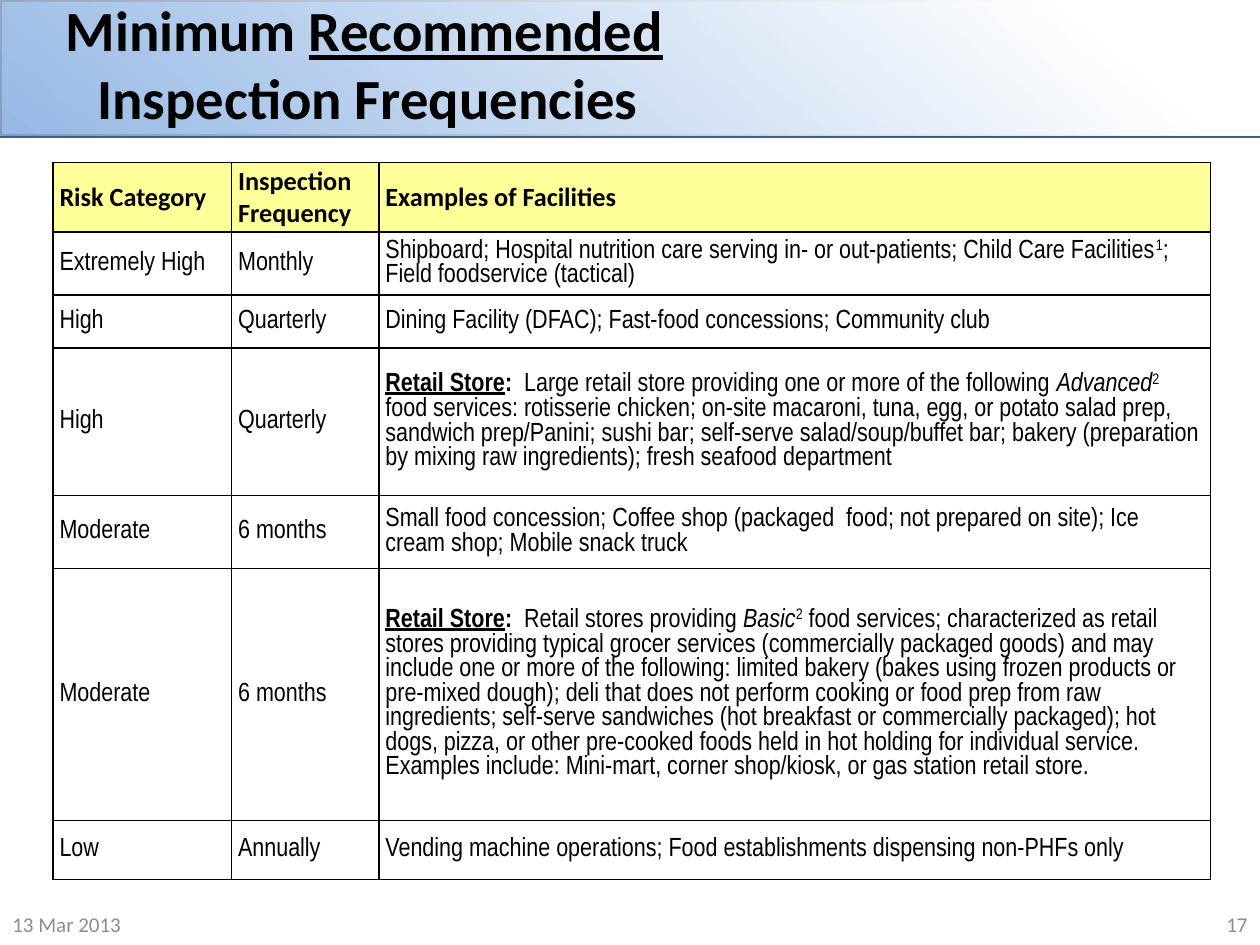
"""Build the slide on minimum recommended inspection frequencies."""
from lxml import etree
from pptx import Presentation
from pptx import util as u
from pptx.dml.color import RGBColor
from pptx.enum import shapes, text
from pptx.oxml import ns

BODY = {"name": "Arial Narrow", "size": u.Pt(15), "color": "000000"}
HEAD = {"name": "Calibri", "size": u.Pt(15), "color": "000000", "bold": True}
TITLE = {"name": "Calibri", "size": u.Pt(32.4), "color": "000000", "bold": True}
FOOT = {"name": "Calibri", "size": u.Pt(12), "color": "8C8C8C"}
UNDER, ITALIC, SUPER = {"underline": True}, {"italic": True}, {"baseline": 30000}
STORE = [("Retail Store", {"bold": True, "underline": True}), (":  ", {"bold": True})]

COLS = (3.6, 2.97, 16.76)
ROWS = (1.4, 1.27, 1.07, 2.97, 1.47, 5.08, 1.19)
CELLS = [
    ("Risk Category", "Inspection Frequency", "Examples of Facilities"),
    ("Extremely High", "Monthly", [
        ("Shipboard; Hospital nutrition care serving in- or out-patients; "
         "Child Care Facilities", {}),
        ("1", SUPER), ("; Field foodservice (tactical)", {})]),
    ("High", "Quarterly",
     "Dining Facility (DFAC); Fast-food concessions; Community club"),
    ("High", "Quarterly", STORE + [
        ("Large retail store providing one or more of the following ", {}),
        ("Advanced", ITALIC), ("2", SUPER),
        (" food services: rotisserie chicken; on-site macaroni, tuna, egg, or potato "
         "salad prep, sandwich prep/Panini; sushi bar; self-serve salad/soup/buffet "
         "bar; bakery (preparation by mixing raw ingredients); fresh seafood "
         "department", {})]),
    ("Moderate", "6 months",
     "Small food concession; Coffee shop (packaged  food; not prepared on site); "
     "Ice cream shop; Mobile snack truck"),
    ("Moderate", "6 months", STORE + [
        ("Retail stores providing ", {}), ("Basic", ITALIC), ("2", SUPER),
        (" food services; characterized as retail stores providing typical grocer "
         "services (commercially packaged goods) and may include one or more of the "
         "following: limited bakery (bakes using frozen products or pre-mixed dough); "
         "deli that does not perform cooking or food prep from raw ingredients; "
         "self-serve sandwiches (hot breakfast or commercially packaged); hot dogs, "
         "pizza, or other pre-cooked foods held in hot holding for individual "
         "service.  Examples include: Mini-mart, corner shop/kiosk, or gas station "
         "retail store.", {})]),
    ("Low", "Annually",
     "Vending machine operations; Food establishments dispensing non-PHFs only"),
]


def rgb(value):
    """Return a colour from a hex string."""
    return RGBColor.from_string(value)


def box(*lengths):
    """Return lengths in centimetres."""
    return [u.Cm(n) for n in lengths]


def add_run(p, words, fmt):
    """Add a run and apply its format values."""
    r = p.add_run()
    r.text = words
    for key, value in fmt.items():
        if key == "color":
            r.font.color.rgb = rgb(value)
        elif key == "baseline":
            r._r.get_or_add_rPr().set(key, str(value))
        else:
            setattr(r.font, key, value)


def add_band(s):
    """Add the blue band with its white fade behind the title."""
    for i in range(2):
        sp = s.shapes.add_shape(shapes.MSO_SHAPE.RECTANGLE, *box(0, 0, 25.4, 2.74))
        sp.shadow.inherit = False
        s.shapes._spTree.insert(2 + i, sp._element)
        if i == 0:
            sp.fill.solid()
            sp.fill.fore_color.rgb = rgb("558ED5")
            sp.line.color.rgb = rgb("3A5F8C")
            sp.line.width = u.Pt(2)
            continue
        sp.line.fill.background()
        sp.fill.gradient()
        sp.fill.gradient_angle = 230
        for stop, position in zip(sp.fill.gradient_stops, (0.14, 1)):
            stop.color.rgb = rgb("FFFFFF")
            stop.position = position
        last = sp._element.spPr.findall(".//" + ns.qn("a:srgbClr"))[-1]
        etree.SubElement(last, ns.qn("a:alpha")).set("val", "37000")


def add_title(s):
    """Place the title with its hanging second line."""
    sp = s.shapes.title
    sp.left, sp.top, sp.width, sp.height = box(1.07, 0, 22.86, 2.54)
    tf = sp.text_frame
    tf.auto_size = text.MSO_AUTO_SIZE.NONE
    tf.vertical_anchor = text.MSO_ANCHOR.MIDDLE
    p = tf.paragraphs[0]
    p.alignment = text.PP_ALIGN.LEFT
    pPr = p._p.get_or_add_pPr()
    pPr.set("marL", str(u.Cm(0.64)))
    pPr.set("indent", str(-u.Cm(0.64)))
    add_run(p, "Minimum ", TITLE)
    add_run(p, "Recommended", TITLE | UNDER)
    add_run(p, " ", TITLE)
    p.add_line_break()
    add_run(p, "Inspection Frequencies", TITLE)


def add_borders(cell):
    """Draw a thin black line on every side of a cell."""
    tcPr = cell._tc.get_or_add_tcPr()
    for i, side in enumerate(("lnL", "lnR", "lnT", "lnB")):
        ln = etree.Element(ns.qn("a:" + side), w=str(u.Pt(1)))
        fill = etree.SubElement(ln, ns.qn("a:solidFill"))
        etree.SubElement(fill, ns.qn("a:srgbClr"), val="000000")
        tcPr.insert(i, ln)


def fill_cell(cell, content, fmt, color):
    """Write and format one table cell."""
    values = {"margin_left": u.Cm(0.13), "margin_right": u.Cm(0.13), "margin_top": 0,
              "margin_bottom": 0, "vertical_anchor": text.MSO_ANCHOR.MIDDLE}
    for key, value in values.items():
        setattr(cell, key, value)
    if color:
        cell.fill.solid()
        cell.fill.fore_color.rgb = rgb(color)
    else:
        cell.fill.background()
    add_borders(cell)
    runs = [(content, {})] if isinstance(content, str) else content
    for words, extra in runs:
        add_run(cell.text_frame.paragraphs[0], words, fmt | extra)


def add_frequencies(s):
    """Add the table of inspection frequencies."""
    table = s.shapes.add_table(len(ROWS), len(COLS),
                               *box(1.07, 3.28, sum(COLS), sum(ROWS))).table
    table.first_row = table.horz_banding = False
    for column, width in zip(table.columns, COLS):
        column.width = u.Cm(width)
    for i, (row, height) in enumerate(zip(table.rows, ROWS)):
        row.height = u.Cm(height)
        fmt, color = (BODY, None) if i else (HEAD, "FFFF99")
        for cell, content in zip(row.cells, CELLS[i]):
            fill_cell(cell, content, fmt, color)


def add_footer(s, words, left, align):
    """Add a small grey footer text."""
    tf = s.shapes.add_textbox(*box(left, 18.21, 5.92, 0.84)).text_frame
    tf.word_wrap = True
    tf.vertical_anchor = text.MSO_ANCHOR.MIDDLE
    p = tf.paragraphs[0]
    p.alignment = align
    add_run(p, words, FOOT)


def main():
    """Build and save the slide."""
    prs = Presentation()
    prs.slide_width, prs.slide_height = box(25.4, 19.05)
    s = prs.slides.add_slide(prs.slide_layouts[5])
    add_band(s)
    add_title(s)
    add_footer(s, "13 Mar 2013", 0, text.PP_ALIGN.LEFT)
    add_frequencies(s)
    add_footer(s, "17", 19.48, text.PP_ALIGN.RIGHT)
    prs.save("out.pptx")


if __name__ == "__main__":
    main()
